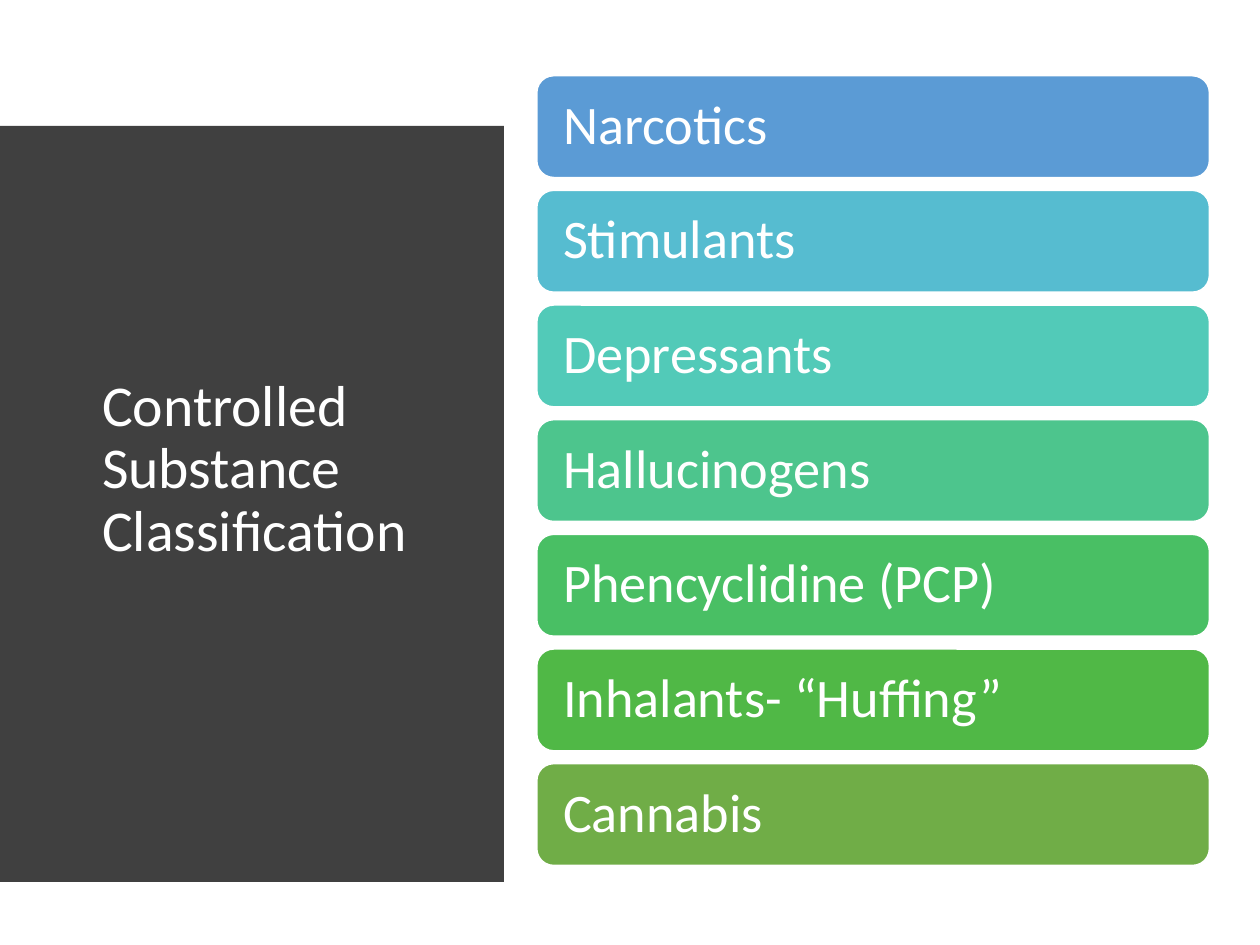
"""Build the controlled substance classification slide."""
from pptx import Presentation
from pptx.dml.color import RGBColor
from pptx.enum.shapes import MSO_SHAPE
from pptx.enum.text import MSO_ANCHOR, MSO_AUTO_SIZE, PP_ALIGN
from pptx.util import Inches, Pt

TITLE = "Controlled Substance Classification"
CLASSES = [
    ("Narcotics", "blue"),
    ("Stimulants", "sky"),
    ("Depressants", "turquoise"),
    ("Hallucinogens", "jade"),
    ("Phencyclidine (PCP)", "emerald"),
    ("Inhalants- “Huffing”", "green"),
    ("Cannabis", "olive"),
]
COLORS = {
    "white": "FFFFFF", "panel": "404040", "blue": "5B9BD5", "sky": "56BCD0",
    "turquoise": "52CAB8", "jade": "4DC58D", "emerald": "49BF64",
    "green": "50B846", "olive": "70AD47",
}
PANEL_LEFT, PANEL_TOP, PANEL_BOTTOM = 0.4, 0.52, 6.96
PANEL_EDGE = [
    (3.81, 0.52), (3.84, 0.74), (3.87, 1.04), (3.9, 1.34), (3.92, 1.64),
    (3.94, 1.94), (3.96, 2.24), (3.97, 2.53), (3.98, 2.82), (3.99, 3.25),
    (3.99, 3.94), (3.98, 4.33), (3.97, 4.71), (3.95, 5.18), (3.93, 5.61),
    (3.9, 5.99), (3.87, 6.33), (3.85, 6.61), (3.82, 6.82), (3.81, 6.96),
]
BAR_LEFT, BAR_TOP, BAR_WIDTH, BAR_HEIGHT, BAR_PITCH = 4.26, 0.6, 5.34, 0.81, 0.91


def color(name):
    return RGBColor.from_string(COLORS[name])


def write(shape, text, size):
    frame = shape.text_frame
    frame.text = text
    frame.word_wrap = True
    frame.auto_size = MSO_AUTO_SIZE.NONE
    frame.vertical_anchor = MSO_ANCHOR.MIDDLE
    paragraph = frame.paragraphs[0]
    paragraph.alignment = PP_ALIGN.LEFT
    paragraph.line_spacing = 0.9
    paragraph.font.name = "Calibri"
    paragraph.font.size = Pt(size)
    paragraph.font.color.rgb = color("white")
    return frame


def paint(shape, fill):
    shape.shadow.inherit = False
    shape.fill.solid()
    shape.fill.fore_color.rgb = color(fill)


def add_panel(slide):
    builder = slide.shapes.build_freeform(PANEL_LEFT, PANEL_TOP, scale=Inches(1))
    builder.add_line_segments(PANEL_EDGE + [(PANEL_LEFT, PANEL_BOTTOM)])
    panel = builder.convert_to_shape()
    paint(panel, "panel")
    panel.line.fill.background()
    slide.shapes.title._element.addprevious(panel._element)


def add_title(slide):
    title = slide.shapes.title
    title.left, title.top = Inches(0.71), Inches(1.11)
    title.width, title.height = Inches(2.8), Inches(5.24)
    write(title, TITLE, 33)


def add_bar(slide, index, text, fill):
    bar = slide.shapes.add_shape(
        MSO_SHAPE.ROUNDED_RECTANGLE,
        Inches(BAR_LEFT), Inches(BAR_TOP + index * BAR_PITCH),
        Inches(BAR_WIDTH), Inches(BAR_HEIGHT))
    paint(bar, fill)
    bar.line.color.rgb = color("white")
    bar.line.width = Pt(1)
    frame = write(bar, text, 31)
    frame.margin_left = frame.margin_right = Inches(0.17)
    frame.margin_top = frame.margin_bottom = Inches(0.17)


def main():
    presentation = Presentation()
    presentation.slide_width, presentation.slide_height = Inches(10), Inches(7.5)
    slide = presentation.slides.add_slide(presentation.slide_layouts[5])
    add_panel(slide)
    add_title(slide)
    for index, (text, fill) in enumerate(CLASSES):
        add_bar(slide, index, text, fill)
    presentation.save("out.pptx")


if __name__ == "__main__":
    main()
